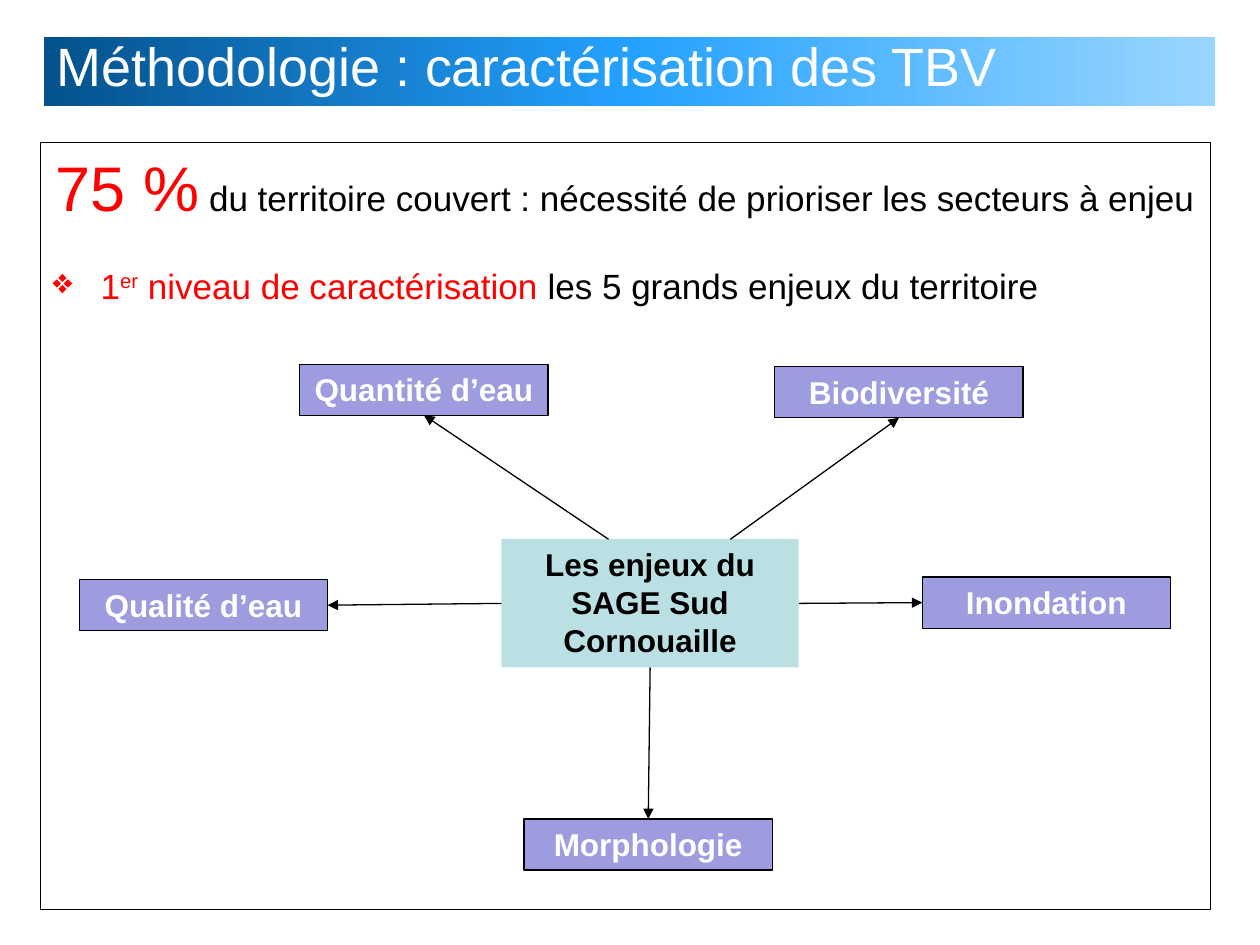
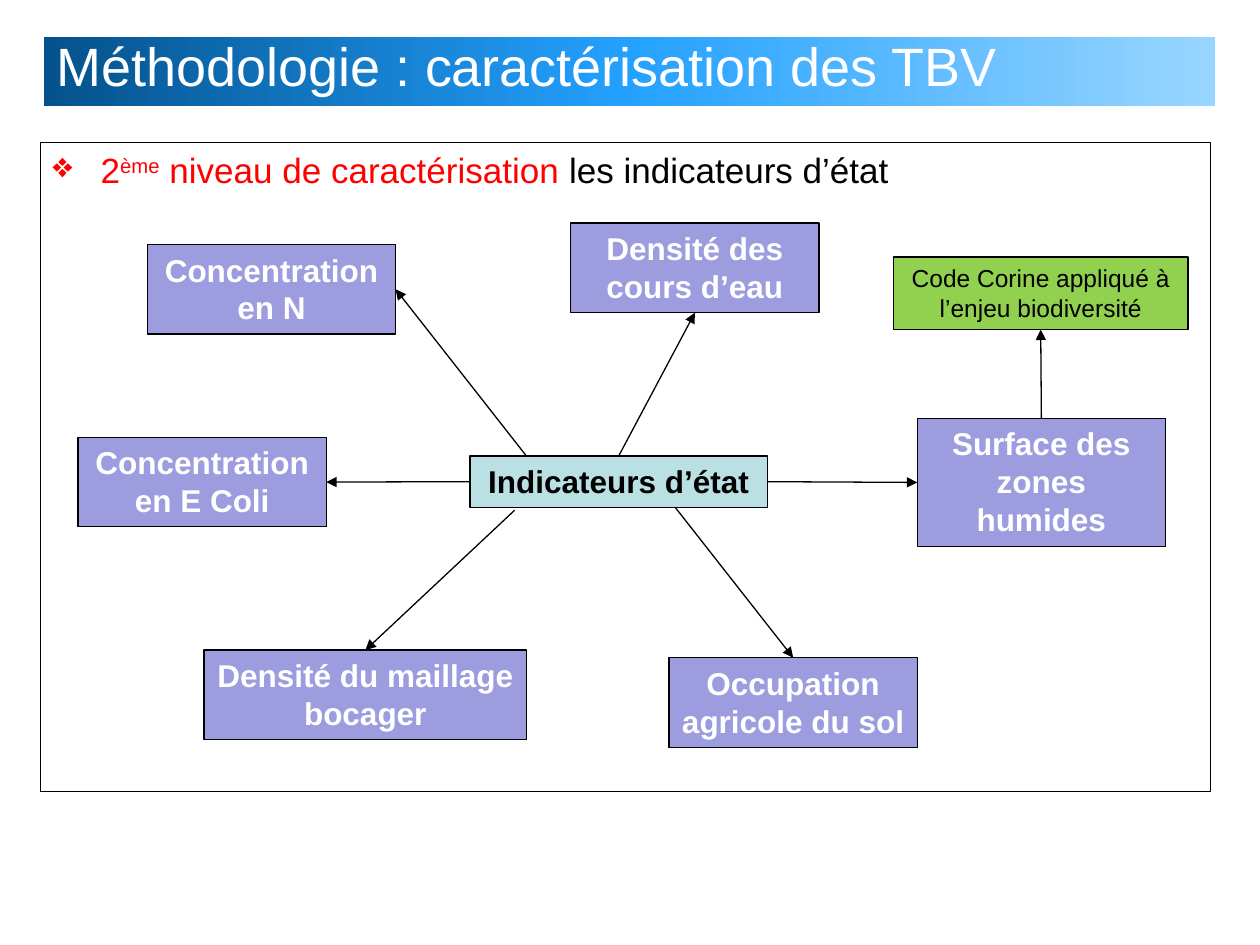
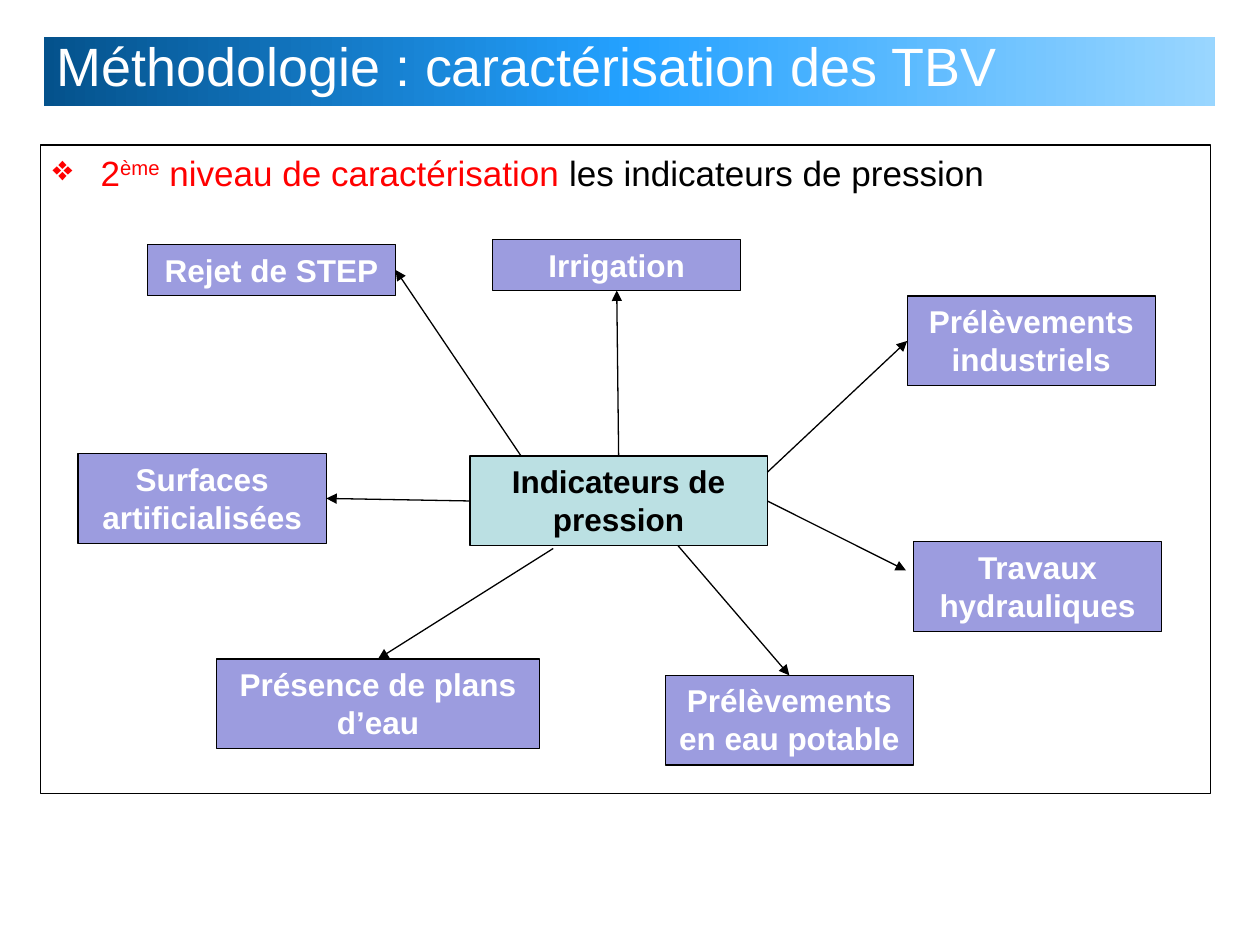
from dataclasses import dataclass

from lxml import etree
from pptx import Presentation
from pptx import util as u
from pptx.dml.color import RGBColor
from pptx.enum import shapes, text
from pptx.oxml.ns import qn


@dataclass(frozen=True)
class Theme:
    font: str = "Arial"
    band: tuple = ((0, "04528C"), (50, "24A1FF"), (100, "99D6FF"))
    white: str = "FFFFFF"
    ink: str = "000000"
    accent: str = "FF0000"
    hub: str = "BBE0E3"
    node: str = "9C9CDF"
    note: str = "92D050"
    title_size: float = 30.8
    figure_size: float = 36
    lead_size: float = 20
    node_size: float = 18
    note_size: float = 14
    line: float = 0.75


T = Theme()
WIDTH, HEIGHT = u.Inches(10), u.Inches(7.5)
CELL = WIDTH // 100  # the grid has 100 columns and 75 rows of square cells
TITLE = "Méthodologie : caractérisation des TBV"
NODE_W, HUB_W, WIDE_W = 19.7, 23.6, 25.6

# Sides of a box: share of width, share of height, connection site
SIDES = {"top": (0.5, 0, 0), "left": (0, 0.5, 1),
         "bottom": (0.5, 1, 2), "right": (1, 0.5, 3)}


@dataclass(frozen=True)
class Node:
    """A label placed in a panel; the arrow goes from a share of the hub."""
    label: str
    col: float
    row: float
    lines: int = 1
    start: tuple = (0.5, 0.5)
    end: object = "top"  # a side, or shares of the node
    width: float = NODE_W


def cells(n):
    return round(n * CELL)


def rgb(color):
    return RGBColor.from_string(color)


def add_run(p, words, size, color, bold=False, raised=False):
    r = p.add_run()
    r.text = words
    r.font.name, r.font.size, r.font.bold = T.font, u.Pt(size), bold
    r.font.color.rgb = rgb(color)
    if raised:
        r._r.get_or_add_rPr().set("baseline", "30000")


def add_box(s, col, row, width, height, fill=None, line=T.ink):
    sp = s.shapes.add_shape(shapes.MSO_SHAPE.RECTANGLE,
                            *map(cells, (col, row, width, height)))
    sp.shadow.inherit = False
    if fill:
        sp.fill.solid()
        sp.fill.fore_color.rgb = rgb(fill)
    else:
        sp.fill.background()
    if line:
        sp.line.color.rgb, sp.line.width = rgb(line), u.Pt(T.line)
    else:
        sp.line.fill.background()
    tf = sp.text_frame
    tf.word_wrap, tf.vertical_anchor = True, text.MSO_ANCHOR.TOP
    tf.paragraphs[0].alignment = text.PP_ALIGN.LEFT
    return sp


def add_label(s, words, col, row, width, lines, fill, color,
              size=T.node_size, bold=True, line=T.ink):
    """Centred label whose height follows from its number of lines."""
    height = 1 + 0.17 * size * lines
    sp = add_box(s, col, row, width, height, fill, line)
    p = sp.text_frame.paragraphs[0]
    p.alignment = text.PP_ALIGN.CENTER
    add_run(p, words, size, color, bold)
    return sp


def point_on(sp, fx, fy):
    return round(sp.left + fx * sp.width), round(sp.top + fy * sp.height)


def add_arrow(s, source, start, target, end):
    tip = SIDES[end][:2] if end in SIDES else end
    line = s.shapes.add_connector(shapes.MSO_CONNECTOR.STRAIGHT,
                                  *point_on(source, *start),
                                  *point_on(target, *tip))
    if end in SIDES:
        line.end_connect(target, SIDES[end][2])
    line.line.color.rgb, line.line.width = rgb(T.ink), u.Pt(T.line)
    ln = line.line._get_or_add_ln()
    etree.SubElement(ln, qn("a:tailEnd"), type="triangle")
    etree.SubElement(line._element.spPr, qn("a:effectLst"))


# Title band with its three-colour gradient
def add_title(s):
    sp = add_box(s, 3.5, 2.9, 92.9, 5.5, line=None)
    sp.fill.gradient()
    sp.fill.gradient_angle = 0
    stops = sp._element.spPr.find(".//" + qn("a:gsLst"))
    for old in list(stops):
        stops.remove(old)
    for share, color in T.band:
        stop = etree.SubElement(stops, qn("a:gs"), pos=str(share * 1000))
        etree.SubElement(stop, qn("a:srgbClr"), val=color)
    tf = sp.text_frame
    tf.vertical_anchor = text.MSO_ANCHOR.MIDDLE
    tf.paragraphs[0].line_spacing = 0.8
    add_run(tf.paragraphs[0], TITLE, T.title_size, T.white)


# Framed panel: optional key figure, then the bulleted level
def add_panel(s, row, height, level, subject, figure=None):
    panel = add_box(s, 3.2, row, 92.9, height)
    tf = panel.text_frame
    p = tf.paragraphs[0]
    if figure:
        p.alignment = text.PP_ALIGN.CENTER
        add_run(p, figure[0], T.figure_size, T.accent)
        add_run(p, figure[1], T.lead_size, T.ink)
        p = tf.add_paragraph()
        p.alignment, p.space_before = text.PP_ALIGN.LEFT, u.Pt(23)
    pPr = p._p.get_or_add_pPr()
    pPr.set("marL", str(cells(3.8)))
    pPr.set("indent", str(cells(-3.8)))
    etree.SubElement(pPr, qn("a:buChar"), char="❖")
    number, ordinal = level
    add_run(p, number, T.lead_size, T.accent)
    add_run(p, ordinal, T.lead_size, T.accent, raised=True)
    add_run(p, " niveau de caractérisation ", T.lead_size, T.accent)
    add_run(p, subject, T.lead_size, T.ink)
    return panel


# Hub with labels around it, placed from the panel's corner
def add_star(s, panel, hub, nodes, hub_line=T.ink):
    left, top = panel.left / CELL, panel.top / CELL
    center = add_label(s, hub.label, left + hub.col, top + hub.row,
                       hub.width, hub.lines, T.hub, T.ink, line=hub_line)
    drawn = {}
    for n in nodes:
        sp = add_label(s, n.label, left + n.col, top + n.row,
                       n.width, n.lines, T.node, T.white)
        add_arrow(s, center, n.start, sp, n.end)
        drawn[n.label] = sp
    return drawn


def new_slide(prs):
    s = prs.slides.add_slide(prs.slide_layouts[6])
    add_title(s)
    return s


def issues_slide(prs):
    s = new_slide(prs)
    panel = add_panel(
        s, 11.3, 60.9, ("1", "er"), "les 5 grands enjeux du territoire",
        ("75 %", " du territoire couvert : nécessité de prioriser "
                 "les secteurs à enjeu"))
    hub = Node("Les enjeux du SAGE Sud Cornouaille", 36.6, 31.5, 3,
               width=HUB_W)
    add_star(s, panel, hub, [
        Node("Qualité d’eau", 3.1, 34.7, 1, (0, 0.5), "right"),
        Node("Morphologie", 38.4, 53.7, 1, (0.5, 1), "top"),
        Node("Inondation", 70, 34.5, 1, (1, 0.5), "left"),
        Node("Quantité d’eau", 20.6, 17.6, 1, (0.36, 0), "bottom"),
        Node("Biodiversité", 58.3, 17.8, 1, (0.77, 0), "bottom"),
    ], hub_line=None)


def state_slide(prs):
    s = new_slide(prs)
    panel = add_panel(s, 11.3, 51.5, ("2", "ème"), "les indicateurs d’état")
    hub = Node("Indicateurs d’état", 34.1, 24.9, 1, width=HUB_W)
    wetlands = "Surface des zones humides"
    drawn = add_star(s, panel, hub, [
        Node("Concentration en E Coli", 3, 23.4, 2, (0, 0.5), "right"),
        Node("Densité du maillage bocager", 13, 40.3, 2, (0.15, 1.06), "top",
             WIDE_W),
        Node(wetlands, 69.6, 21.9, 3, (1, 0.5), "left"),
        Node("Concentration en N", 8.5, 8.1, 2, (0.19, 0), "right"),
        Node("Densité des cours d’eau", 42.1, 6.4, 2, (0.5, 0), "bottom"),
        Node("Occupation agricole du sol", 49.9, 40.9, 2, (0.69, 1), "top"),
    ])
    # Note above the wetlands label
    note = add_label(s, "Code Corine appliqué à l’enjeu biodiversité",
                     panel.left / CELL + 67.7, panel.top / CELL + 9.1, 23.4, 2,
                     T.note, T.ink, T.note_size, bold=False)
    add_arrow(s, drawn[wetlands], (0.5, 0), note, "bottom")


def pressure_slide(prs):
    s = new_slide(prs)
    panel = add_panel(s, 11.5, 51.5, ("2", "ème"),
                      "les indicateurs de pression")
    hub = Node("Indicateurs de pression", 34.1, 24.7, 2, width=HUB_W)
    add_star(s, panel, hub, [
        Node("Surfaces artificialisées", 3, 24.5, 2, (0, 0.5), "right"),
        Node("Présence de plans d’eau", 14, 40.8, 2, (0.28, 1.03), "top",
             WIDE_W),
        Node("Prélèvements industriels", 68.8, 12, 2, (1, 0.18), "left"),
        Node("Rejet de STEP", 8.5, 7.9, 1, (0.17, -0.01), "right"),
        Node("Irrigation", 35.9, 7.5, 1, (0.5, 0), "bottom"),
        Node("Prélèvements en eau potable", 49.6, 42.1, 2, (0.7, 1), "top"),
        Node("Travaux hydrauliques", 69.3, 31.5, 2, (1, 0.5), (-0.03, 0.32)),
    ])


def main():
    prs = Presentation()
    prs.slide_width, prs.slide_height = WIDTH, HEIGHT
    for build in (issues_slide, state_slide, pressure_slide):
        build(prs)
    prs.save("out.pptx")


if __name__ == "__main__":
    main()
